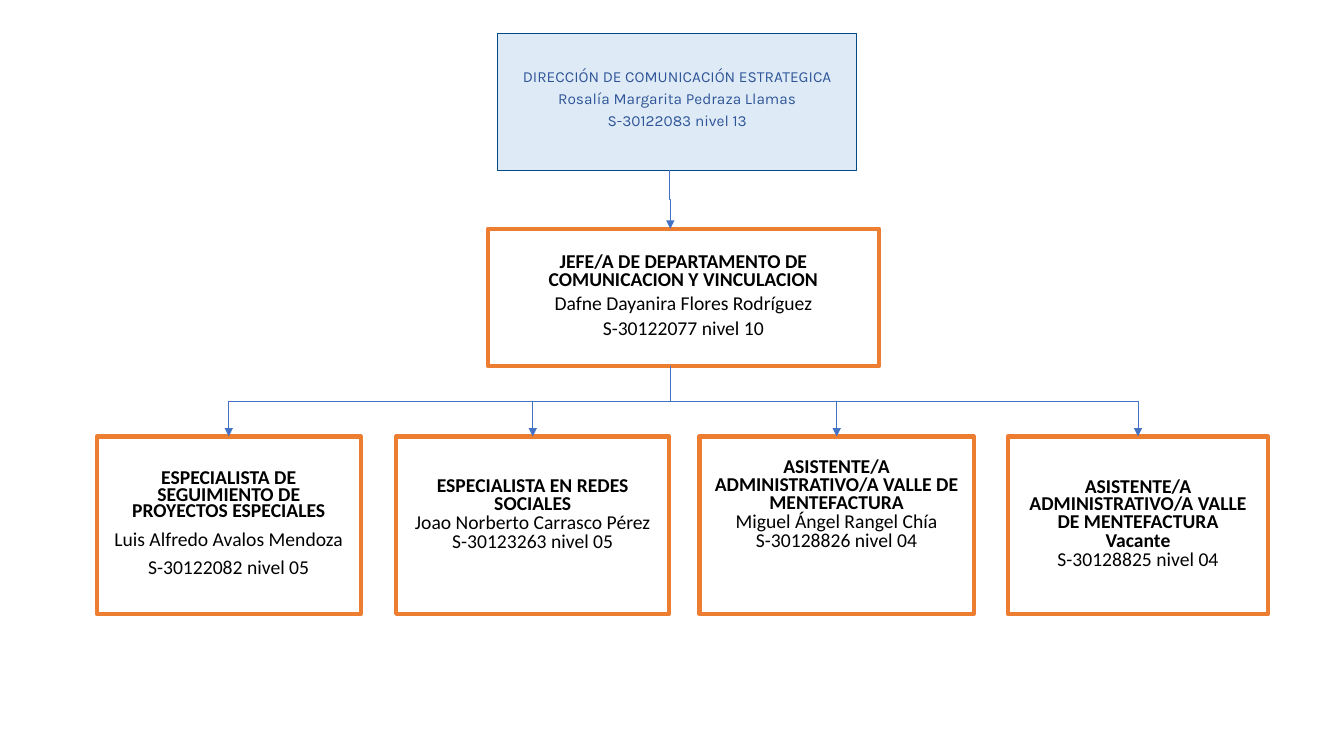
from dataclasses import dataclass

from lxml.etree import SubElement
from pptx import Presentation
from pptx.dml.color import RGBColor
from pptx.enum.shapes import MSO_CONNECTOR, MSO_SHAPE
from pptx.enum.text import MSO_ANCHOR, PP_ALIGN
from pptx.oxml.ns import qn
from pptx.util import Pt


@dataclass(frozen=True)
class Line:
    text: str
    bold: bool = False
    spacing: float | Pt | None = Pt(12.6)
    before: float = 1.1
    after: float = 0


@dataclass(frozen=True)
class Post:
    left: float
    top: float
    width: float
    height: float
    lines: tuple[Line, ...]
    fill: str | None = None
    border: str = "ED7D31"
    border_width: float = 3
    font: str = "Calibri"
    size: float = 14
    color: str = "000000"
    side_inset: float = 7.2
    top_inset: float = 3.6
    bottom_inset: float = 3.6

    @property
    def center(self) -> float:
        return self.left + self.width / 2

    @property
    def bottom(self) -> float:
        return self.top + self.height


def rgb(color: str) -> RGBColor:
    return RGBColor.from_string(color)


def draw_post(shapes, post: Post) -> None:
    box = shapes.add_shape(MSO_SHAPE.RECTANGLE, Pt(post.left), Pt(post.top),
                           Pt(post.width), Pt(post.height))
    box.shadow.inherit = False
    if post.fill:
        box.fill.solid()
        box.fill.fore_color.rgb = rgb(post.fill)
    else:
        box.fill.background()
    box.line.color.rgb = rgb(post.border)
    box.line.width = Pt(post.border_width)

    frame = box.text_frame
    frame.word_wrap = True
    frame.vertical_anchor = MSO_ANCHOR.MIDDLE
    frame.margin_left = frame.margin_right = Pt(post.side_inset)
    frame.margin_top = Pt(post.top_inset)
    frame.margin_bottom = Pt(post.bottom_inset)
    frame.text = "\n".join(line.text for line in post.lines)
    for index, (paragraph, line) in enumerate(zip(frame.paragraphs, post.lines)):
        paragraph.alignment = PP_ALIGN.CENTER
        paragraph.line_spacing = line.spacing
        paragraph.space_before = Pt(line.before if index else 0)
        paragraph.space_after = Pt(line.after)
        for run in paragraph.runs:
            run.font.name = post.font
            run.font.size = Pt(post.size)
            run.font.bold = line.bold
            run.font.color.rgb = rgb(post.color)


def draw_branch(shapes, x1: float, y1: float, x2: float, y2: float) -> None:
    """Draw an elbow arrow that leaves downwards, turns halfway and arrives downwards."""
    drop, shift = y2 - y1, abs(x2 - x1)
    left = (x1 + x2 - drop) / 2
    top = (y1 + y2 - shift) / 2
    branch = shapes.add_connector(MSO_CONNECTOR.ELBOW, Pt(left), Pt(top),
                                  Pt(left + drop), Pt(top + shift))
    branch.line.color.rgb = rgb("4472C4")
    branch.line.width = Pt(0.5)

    # Quarter turn, mirrored for branches to the right
    properties = branch._element.spPr
    transform = properties.find(qn("a:xfrm"))
    if x2 > x1:
        transform.set("rot", "16200000")
        transform.set("flipH", "1")
    else:
        transform.set("rot", "5400000")
    SubElement(properties.find(qn("a:ln")), qn("a:tailEnd"), type="triangle")
    SubElement(properties, qn("a:effectLst"))


CARD_TOP, CARD_HEIGHT = 311.8, 126.7
TRUNK_X = 478.8

director = Post(
    355.7, 23.8, 256.3, 97.9,
    tuple(Line(text, spacing=0.9, before=0, after=4) for text in (
        "DIRECCIÓN DE COMUNICACIÓN ESTRATEGICA",
        "Rosalía Margarita Pedraza Llamas",
        "S-30122083 nivel 13")),
    fill="DEEBF7", border="004A86", border_width=0.75, font="Karla", size=11,
    color="2F5597", side_inset=0.7, top_inset=0.7, bottom_inset=4.3)

department_head = Post(348.5, 163.4, 279.4, 97.9, (
    Line("JEFE/A DE DEPARTAMENTO DE", bold=True),
    Line("COMUNICACION Y VINCULACION", bold=True, before=0),
    Line("Dafne Dayanira Flores Rodríguez", spacing=Pt(16.6), before=0.8),
    Line("S-30122077 nivel 10", spacing=Pt(16.6), before=0.8)))

team = (
    Post(69.1, CARD_TOP, 188.6, CARD_HEIGHT, (
        Line("ESPECIALISTA DE SEGUIMIENTO DE PROYECTOS ESPECIALES",
             bold=True, spacing=Pt(11.9)),
        Line("Luis Alfredo Avalos Mendoza", spacing=None, before=3.4),
        Line("S-30122082 nivel 05", spacing=None, before=3.4)),
        side_inset=11),
    Post(283, CARD_TOP, 195.1, CARD_HEIGHT, (
        Line("ESPECIALISTA EN REDES SOCIALES", bold=True),
        Line("Joao Norberto Carrasco Pérez"),
        Line("S-30123263 nivel 05")),
        bottom_inset=17.3),
    Post(499.7, CARD_TOP, 195.8, CARD_HEIGHT, (
        Line("ASISTENTE/A ADMINISTRATIVO/A VALLE DE MENTEFACTURA", bold=True),
        Line("Miguel Ángel Rangel Chía"),
        Line("S-30128826 nivel 04")),
        bottom_inset=31),
    Post(720, CARD_TOP, 185.8, CARD_HEIGHT, (
        Line("ASISTENTE/A ADMINISTRATIVO/A VALLE DE MENTEFACTURA", bold=True),
        Line("Vacante", bold=True),
        Line("S-30128825 nivel 04"))),
)


def main() -> None:
    presentation = Presentation()
    presentation.slide_width, presentation.slide_height = Pt(960), Pt(540)
    shapes = presentation.slides.add_slide(presentation.slide_layouts[6]).shapes

    # Posts
    for post in (director, department_head, *team):
        draw_post(shapes, post)

    # Reporting lines
    draw_branch(shapes, 478.1, director.bottom, TRUNK_X, department_head.top)
    for post in team:
        draw_branch(shapes, TRUNK_X, department_head.bottom, post.center, post.top)

    presentation.save("out.pptx")


if __name__ == "__main__":
    main()
